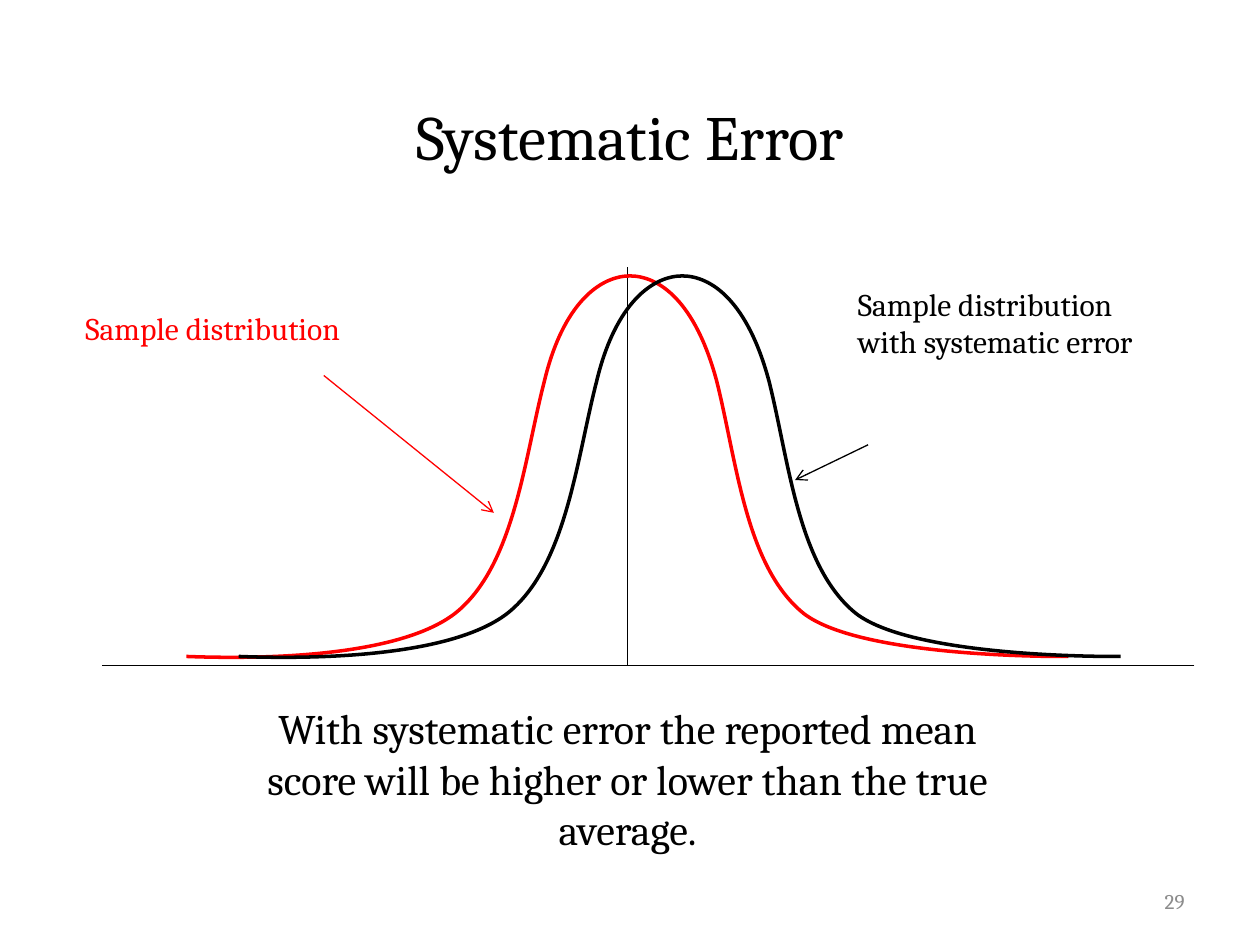
import dataclasses
import typing

import pptx
import pptx.dml.color
import pptx.enum.shapes
import pptx.enum.text
import pptx.oxml.ns
import pptx.util
from lxml import etree

Point = typing.Tuple[float, float]
Align = pptx.enum.text.PP_ALIGN
Anchor = pptx.enum.text.MSO_ANCHOR

COLS, ROWS = 100, 75
FONT = "Cambria"
HEX = {"black": "000000", "red": "FF0000", "gray": "8C8C8C"}

deck = pptx.Presentation()
deck.slide_width = pptx.util.Inches(10)
deck.slide_height = pptx.util.Inches(7.5)
slide = deck.slides.add_slide(deck.slide_layouts[5])


@dataclasses.dataclass
class Label:
    text: str
    left: float
    top: float
    width: float
    height: float
    size: float
    color: str = "black"
    align: Align = Align.LEFT
    anchor: Anchor = Anchor.TOP


@dataclasses.dataclass
class Rule:
    start: Point
    end: Point
    color: str = "black"
    arrow: bool = False


@dataclasses.dataclass
class Curve:
    shift: float
    color: str


def col(value: float) -> int:
    return round(deck.slide_width * value / COLS)


def row(value: float) -> int:
    return round(deck.slide_height * value / ROWS)


def paint(name: str) -> pptx.dml.color.RGBColor:
    return pptx.dml.color.RGBColor.from_string(HEX[name])


def write(shape: typing.Any, label: Label) -> None:
    shape.left, shape.top = col(label.left), row(label.top)
    shape.width, shape.height = col(label.width), row(label.height)
    frame = shape.text_frame
    frame.word_wrap = True
    frame.vertical_anchor = label.anchor
    frame.text = label.text
    para = frame.paragraphs[0]
    para.alignment = label.align
    para.font.name = FONT
    para.font.size = pptx.util.Pt(label.size)
    para.font.color.rgb = paint(label.color)


def add_label(label: Label) -> None:
    write(slide.shapes.add_textbox(0, 0, 0, 0), label)


def add_rule(rule: Rule) -> None:
    line = slide.shapes.add_connector(
        pptx.enum.shapes.MSO_CONNECTOR.STRAIGHT,
        col(rule.start[0]), row(rule.start[1]),
        col(rule.end[0]), row(rule.end[1]))
    line.line.color.rgb = paint(rule.color)
    line.line.width = pptx.util.Pt(0.75)
    if rule.arrow:
        tail = pptx.oxml.ns.qn("a:tailEnd")
        etree.SubElement(line.line._get_or_add_ln(), tail, type="arrow")
    etree.SubElement(line._element.spPr, pptx.oxml.ns.qn("a:effectLst"))


def soften(shape: typing.Any) -> None:
    legs = list(shape._element.iter(pptx.oxml.ns.qn("a:lnTo")))
    for i in range(0, len(legs), 3):
        bend = etree.Element(pptx.oxml.ns.qn("a:cubicBezTo"))
        legs[i].addprevious(bend)
        for leg in legs[i:i + 3]:
            bend.append(leg[0])
            leg.getparent().remove(leg)


def add_curve(curve: Curve) -> None:
    spots = [(col(x + curve.shift), row(y)) for x, y in BELL]
    pen = slide.shapes.build_freeform(*spots[0])
    pen.add_line_segments(spots[1:], close=False)
    shape = pen.convert_to_shape()
    soften(shape)
    shape.shadow.inherit = False
    shape.fill.background()
    shape.line.color.rgb = paint(curve.color)
    shape.line.width = pptx.util.Pt(2)


BELL = [(14.8, 52.1), (20, 52.3), (31.4, 52.3), (36.1, 48.7),
        (40.8, 45), (41.6, 36.5), (43.2, 30.3),
        (44.7, 24), (47.7, 21.9), (50, 21.9),
        (52.3, 21.9), (55.2, 23.9), (56.9, 30.3),
        (58.5, 36.7), (59.2, 45), (63.8, 48.7),
        (68.5, 52.3), (84.8, 52.1), (84.8, 52.1)]

TITLE = Label("Systematic Error", 7.5, 4.5, 85, 12.5, 36,
              align=Align.CENTER, anchor=Anchor.MIDDLE)
NOTE = Label("With systematic error the reported mean score will be higher "
             "or lower than the true average.",
             18.7, 55.3, 62.2, 13.1, 24, align=Align.CENTER)
AXES = [
    Rule((49.8, 21.2), (49.8, 52.8)),
    Rule((94.8, 52.8), (8.1, 52.8)),
]
TAGS = [
    Label("Sample distribution", 5.8, 24, 27, 4, 18, "red"),
    Label("Sample distribution with systematic error",
          67.1, 22.1, 27, 7.1, 18),
]
ARROWS = [
    Rule((25.7, 29.8), (39.2, 40.7), "red", True),
    Rule((68.9, 35.3), (63.1, 38.1), arrow=True),
]
PAGE = Label("29", 71.7, 69.5, 23.3, 4, 12, "gray",
             Align.RIGHT, Anchor.MIDDLE)

write(slide.shapes.title, TITLE)
add_label(NOTE)
for rule in AXES:
    add_rule(rule)
add_curve(Curve(0, "red"))
for label in TAGS:
    add_label(label)
for rule in ARROWS:
    add_rule(rule)
add_curve(Curve(4.15, "black"))
add_label(PAGE)

deck.save("out.pptx")
